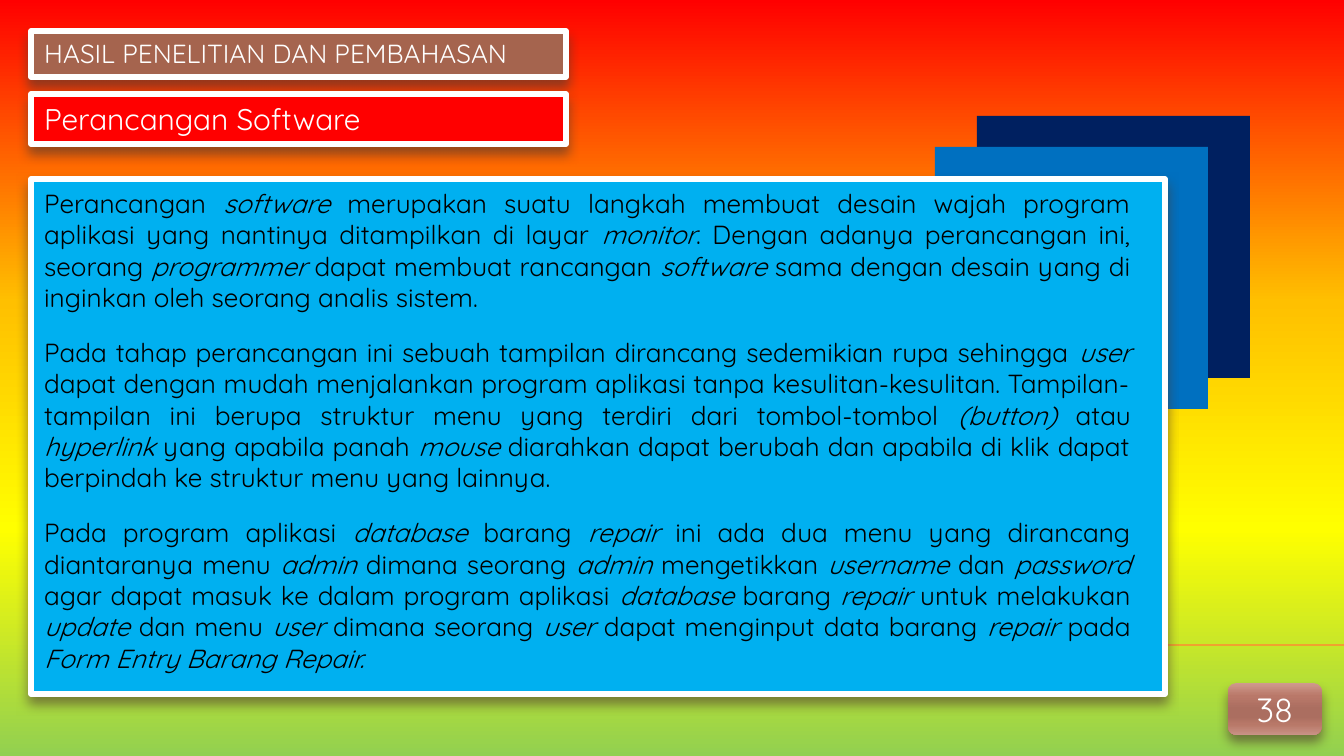
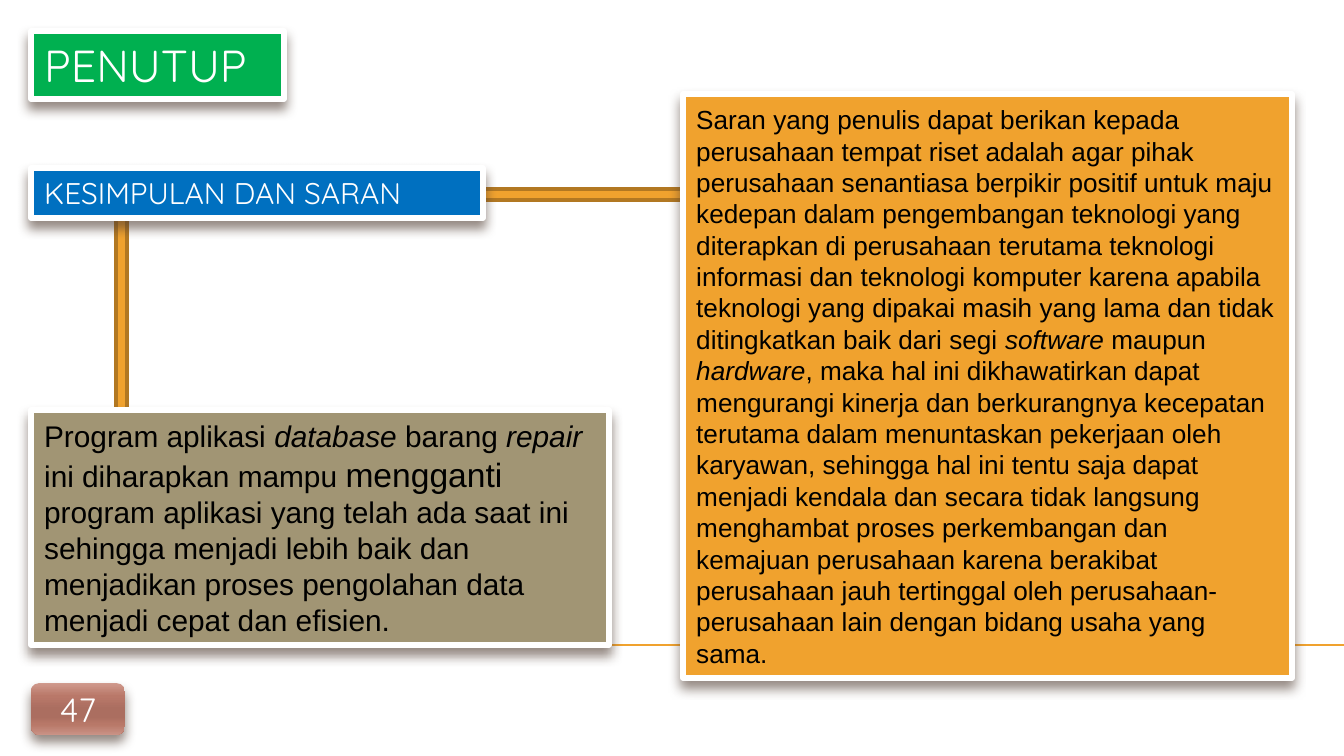
from lxml.etree import SubElement
from pptx import Presentation
from pptx.dml.color import RGBColor
from pptx.enum.shapes import MSO_CONNECTOR, MSO_SHAPE
from pptx.enum.text import MSO_ANCHOR, MSO_AUTO_SIZE, PP_ALIGN
from pptx.oxml.ns import qn
from pptx.util import Emu, Pt

SCALE = 914400 / 134.4
WIDE, HIGH = 1344, 756
EDGE = 31
WHITE, BLACK, BROWN, AMBER = "FFFFFF", "000000", "4E3B30", "F0A22E"
NAVY, BLUE, SKY = "002060", "0070C0", "00B0F0"
HEAD, BODY = "Quicksand", "Arial"
SUNSET = [(0, "FF0000"), (40, "FFC000"), (70, "FFFF00"), (100, "92D050")]
CLAY = [(0, "D09A8D"), (25, "B97869"), (50, "AB6E60"),
        (65, "AB6E60"), (80, "B87868"), (100, "CA9386")]

DESIGN = [
    "Perancangan *software* merupakan suatu langkah membuat desain wajah program "
    "aplikasi yang nantinya ditampilkan di layar *monitor*. Dengan adanya perancangan "
    "ini, seorang *programmer* dapat membuat rancangan *software* sama dengan desain "
    "yang di inginkan oleh seorang analis sistem.",
    "Pada tahap perancangan ini sebuah tampilan dirancang sedemikian rupa sehingga "
    "*user* dapat dengan mudah menjalankan program aplikasi tanpa kesulitan-kesulitan. "
    "Tampilan-tampilan ini berupa struktur menu yang terdiri dari tombol-tombol "
    "*(button)* atau *hyperlink* yang apabila panah *mouse* diarahkan dapat berubah "
    "dan apabila di klik dapat berpindah ke struktur menu yang lainnya.",
    "Pada program aplikasi *database* barang *repair* ini ada dua menu yang dirancang "
    "diantaranya menu* admin* dimana seorang *admin* mengetikkan *username* dan "
    "*password* agar dapat masuk ke dalam program aplikasi *database *barang *repair* "
    "untuk melakukan *update* dan menu *user* dimana seorang *user* dapat menginput "
    "data barang *repair *pada* Form Entry Barang Repair.*",
]
RESULT = [
    "Program aplikasi *database* barang *repair* ini diharapkan mampu |mengganti| "
    "program aplikasi yang telah ada saat ini sehingga menjadi lebih baik dan "
    "menjadikan proses pengolahan data menjadi cepat dan efisien.",
]
ADVICE = [
    "Saran yang penulis dapat berikan kepada perusahaan tempat riset adalah agar "
    "pihak perusahaan senantiasa berpikir positif untuk maju kedepan dalam "
    "pengembangan teknologi yang diterapkan di perusahaan terutama teknologi "
    "informasi dan teknologi komputer karena apabila teknologi yang dipakai masih "
    "yang lama dan tidak ditingkatkan baik dari segi *software* maupun *hardware*, "
    "maka hal ini dikhawatirkan dapat mengurangi kinerja dan berkurangnya kecepatan "
    "terutama dalam menuntaskan pekerjaan oleh karyawan, sehingga hal ini tentu saja "
    "dapat menjadi kendala dan secara tidak langsung menghambat proses perkembangan "
    "dan kemajuan perusahaan karena berakibat perusahaan jauh tertinggal oleh "
    "perusahaan-perusahaan lain dengan bidang usaha yang sama.",
]


def px(*sizes):
    """Turn pixel lengths into EMU."""
    return [Emu(round(size * SCALE)) for size in sizes]


def tint(code):
    """Turn a hex string into a colour."""
    return RGBColor.from_string(code)


def blend(fill, node, stops):
    """Give a fill a top-down gradient with the given stops."""
    fill.gradient()
    fill.gradient_angle = 270
    group = node.find(".//" + qn("a:gsLst"))
    for stop in list(group):
        group.remove(stop)
    for place, code in stops:
        stop = SubElement(group, qn("a:gs"), pos=str(place * 1000))
        SubElement(stop, qn("a:srgbClr"), val=code)


def shade(shape):
    """Cast a soft brown shadow below a shape."""
    group = shape._element.spPr.find(qn("a:effectLst"))
    outer = SubElement(group, qn("a:outerShdw"), blurRad=str(Pt(6)), dist=str(Pt(4)),
                       dir="5400000", algn="ctr", rotWithShape="0")
    color = SubElement(outer, qn("a:srgbClr"), val=BROWN)
    SubElement(color, qn("a:alpha"), val="60000")


def block(slide, box, fill, line=None, width=0, kind=MSO_SHAPE.RECTANGLE):
    """Draw a flat shape; a list as fill makes a gradient."""
    shape = slide.shapes.add_shape(kind, *px(*box))
    shape.shadow.inherit = False
    if isinstance(fill, list):
        blend(shape.fill, shape._element, fill)
    else:
        shape.fill.solid()
        shape.fill.fore_color.rgb = tint(fill)
    if line:
        shape.line.color.rgb = tint(line)
        shape.line.width = Pt(width)
    else:
        shape.line.fill.background()
    return shape


def panel(slide, box, fill):
    """Draw a white-edged block with a shadow."""
    shape = block(slide, box, fill, WHITE, 3)
    shade(shape)
    return shape


def write(shape, texts, size, font, color, align=PP_ALIGN.LEFT, anchor=MSO_ANCHOR.MIDDLE,
          fit=MSO_AUTO_SIZE.SHAPE_TO_FIT_TEXT):
    """Write paragraphs, where *...* is italic and |...| is larger."""
    frame = shape.text_frame
    frame.word_wrap = True
    frame.auto_size = fit
    frame.vertical_anchor = anchor
    for index, text in enumerate(texts):
        para = frame.add_paragraph() if index else frame.paragraphs[0]
        para.alignment = align
        if index:
            para.space_before = Pt(12.5)
        for big, part in enumerate(text.split("|")):
            for slant, words in enumerate(part.split("*")):
                if not words:
                    continue
                run = para.add_run()
                run.text = words
                run.font.size = Pt(size + big % 2 * 2)
                run.font.name = font
                run.font.italic = slant % 2 == 1
                run.font.color.rgb = tint(color)


def banner(slide, box, fill, text, size):
    """Draw a coloured heading strip."""
    write(panel(slide, box, fill), [text], size, HEAD, WHITE, anchor=MSO_ANCHOR.TOP)


def note(slide, box, fill, texts, size):
    """Draw a panel of body text."""
    write(panel(slide, box, fill), texts, size, BODY, BLACK)


def essay(slide, box, texts):
    """Draw a wide panel with a justified text box on it."""
    left, top, wide, high = box
    panel(slide, box, SKY)
    area = slide.shapes.add_textbox(*px(left, top, wide - 21, high - 12))
    write(area, texts, 14, HEAD, BLACK, PP_ALIGN.JUSTIFY)


def stack(slide, box):
    """Draw two offset squares, the darker one behind."""
    left, top, wide, high = box
    for step, fill in enumerate((NAVY, BLUE)):
        block(slide, (left - 42 * step, top + 31 * step, wide, high), fill)


def badge(slide, left, number):
    """Draw the page number button."""
    shape = block(slide, (left, 683, 94, 52), CLAY, kind=MSO_SHAPE.ROUNDED_RECTANGLE)
    shade(shape)
    write(shape, [number], 18, HEAD, WHITE, PP_ALIGN.CENTER, fit=MSO_AUTO_SIZE.NONE)


def start(deck):
    """Add a blank slide with the thin rule near its foot."""
    slide = deck.slides.add_slide(deck.slide_layouts[6])
    rule = slide.shapes.add_connector(MSO_CONNECTOR.STRAIGHT, *px(75, 645, WIDE, 645))
    rule.line.color.rgb = tint(AMBER)
    rule.line.width = Pt(0.75)
    SubElement(rule._element.spPr, qn("a:effectLst"))
    return slide


def design(deck):
    """Build the software design slide."""
    slide = start(deck)
    blend(slide.background.fill, slide._element, SUNSET)
    stack(slide, (977, 116, 273, 262))
    essay(slide, (EDGE, 179, 1134, 515), DESIGN)
    banner(slide, (EDGE, 31, 535, 46), "A5644E", "HASIL PENELITIAN DAN PEMBAHASAN", 14)
    banner(slide, (EDGE, 94, 535, 50), "FF0000", "Perancangan Software", 16)
    badge(slide, 1228, "38")


def closing(deck):
    """Build the conclusion slide."""
    slide = start(deck)
    slide.background.fill.solid()
    slide.background.fill.fore_color.rgb = tint(WHITE)
    for bar in ((116, 210, 11, 210), (473, 189, 220, 11)):
        block(slide, bar, AMBER, "B27822", 2)
    banner(slide, (EDGE, 31, 253, 68), "00B050", "PENUTUP", 24)
    banner(slide, (EDGE, 168, 452, 50), BLUE, "KESIMPULAN DAN SARAN", 16)
    note(slide, (EDGE, 410, 578, 235), "A19574", RESULT, 16)
    note(slide, (683, 94, 609, 584), AMBER, ADVICE, 14)
    badge(slide, EDGE, "47")


def main():
    """Build and save the deck."""
    deck = Presentation()
    deck.slide_width, deck.slide_height = px(WIDE, HIGH)
    design(deck)
    closing(deck)
    deck.save("out.pptx")


if __name__ == "__main__":
    main()
